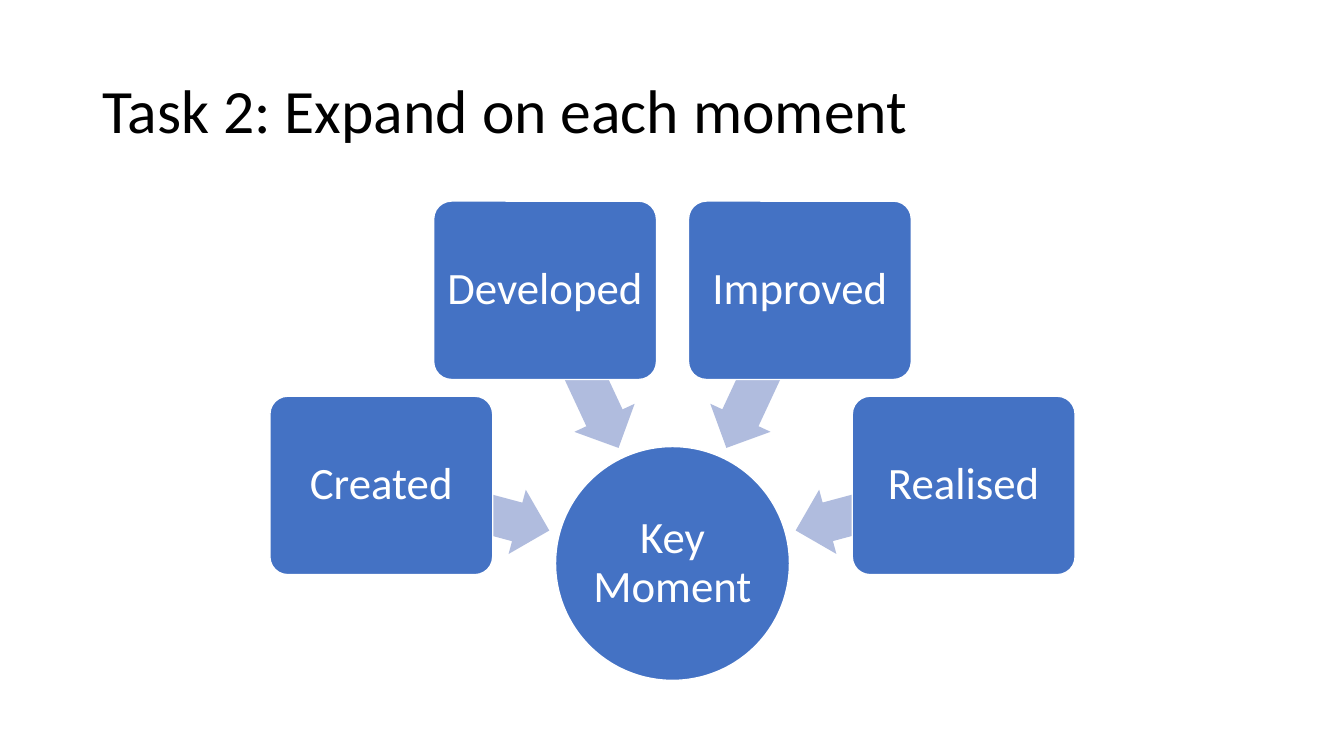
import math

from pptx import Presentation
from pptx.dml.color import RGBColor
from pptx.enum.shapes import MSO_SHAPE
from pptx.enum.text import MSO_ANCHOR, PP_ALIGN
from pptx.util import Pt

PX = 9144  # EMU per px, 100 px to the inch
FONT = "Calibri"
COLORS = {"text": "000000", "node": "4472C4", "arrow": "B0BCDE", "white": "FFFFFF"}

ELLIPSE = MSO_SHAPE.OVAL
ROUND_RECT = MSO_SHAPE.ROUNDED_RECTANGLE
LEFT_ARROW = MSO_SHAPE.LEFT_ARROW
MIDDLE = MSO_ANCHOR.MIDDLE
LEFT, CENTER = PP_ALIGN.LEFT, PP_ALIGN.CENTER


def px(*lengths):
    return [round(n * PX) for n in lengths]


def color(name):
    return RGBColor.from_string(COLORS[name])


def set_text(sp, text, size, color_name, align, inset_x, inset_y):
    tf = sp.text_frame
    tf.word_wrap = True
    tf.vertical_anchor = MIDDLE
    tf.margin_left = tf.margin_right = inset_x * PX
    tf.margin_top = tf.margin_bottom = inset_y * PX
    tf.text = text
    p = tf.paragraphs[0]
    p.alignment = align
    p.line_spacing = 0.9
    font = p.runs[0].font
    font.name = FONT
    font.size = Pt(size)
    font.color.rgb = color(color_name)


def add_centred(s, kind, cx, cy, width, height, fill):
    """Add a filled shape around a centre point."""
    sp = s.shapes.add_shape(kind, *px(cx - width / 2, cy - height / 2, width, height))
    sp.shadow.inherit = False
    sp.fill.solid()
    sp.fill.fore_color.rgb = color(fill)
    sp.line.fill.background()
    return sp


def add_node(s, kind, cx, cy, width, height, text, inset):
    sp = add_centred(s, kind, cx, cy, width, height, "node")
    sp.line.color.rgb = color("white")
    sp.line.width = Pt(1)
    set_text(sp, text, 32, "white", CENTER, inset, inset)
    return sp


def add_title(s, left, top, width, height, text):
    sp = s.shapes.add_textbox(*px(left, top, width, height))
    set_text(sp, text, 44, "text", LEFT, 10, 5)


def add_radial_diagram(s, left, top, width, height, hub, labels):
    """Boxes on an arc above a hub, each with an arrow towards it."""
    hub_size, box_w, box_h = 232, 221, 177
    box_radius, arrow_radius = 299, 213
    first_angle, step = 195, 50
    cx = left + width / 2
    cy = top + height - hub_size / 2

    # Hub
    add_node(s, ELLIPSE, cx, cy, hub_size, hub_size, hub, 2)

    # Arrows and boxes
    for i, label in enumerate(labels):
        angle = first_angle + i * step
        dx, dy = math.cos(math.radians(angle)), math.sin(math.radians(angle))
        arrow = add_centred(s, LEFT_ARROW, cx + arrow_radius * dx,
                            cy + arrow_radius * dy, 173, 66, "arrow")
        arrow.adjustments[0] = 0.6
        arrow.adjustments[1] = 0.5
        arrow.rotation = angle
        box = add_node(s, ROUND_RECT, cx + box_radius * dx, cy + box_radius * dy,
                       box_w, box_h, label, 7)
        box.adjustments[0] = 0.1


def main():
    prs = Presentation()
    prs.slide_width, prs.slide_height = px(1333, 750)
    s = prs.slides.add_slide(prs.slide_layouts[6])
    add_title(s, 92, 40, 1150, 145, "Task 2: Expand on each moment")
    add_radial_diagram(s, 267, 200, 800, 475, "Key Moment",
                       ["Created", "Developed", "Improved", "Realised"])
    prs.save("out.pptx")


if __name__ == "__main__":
    main()
